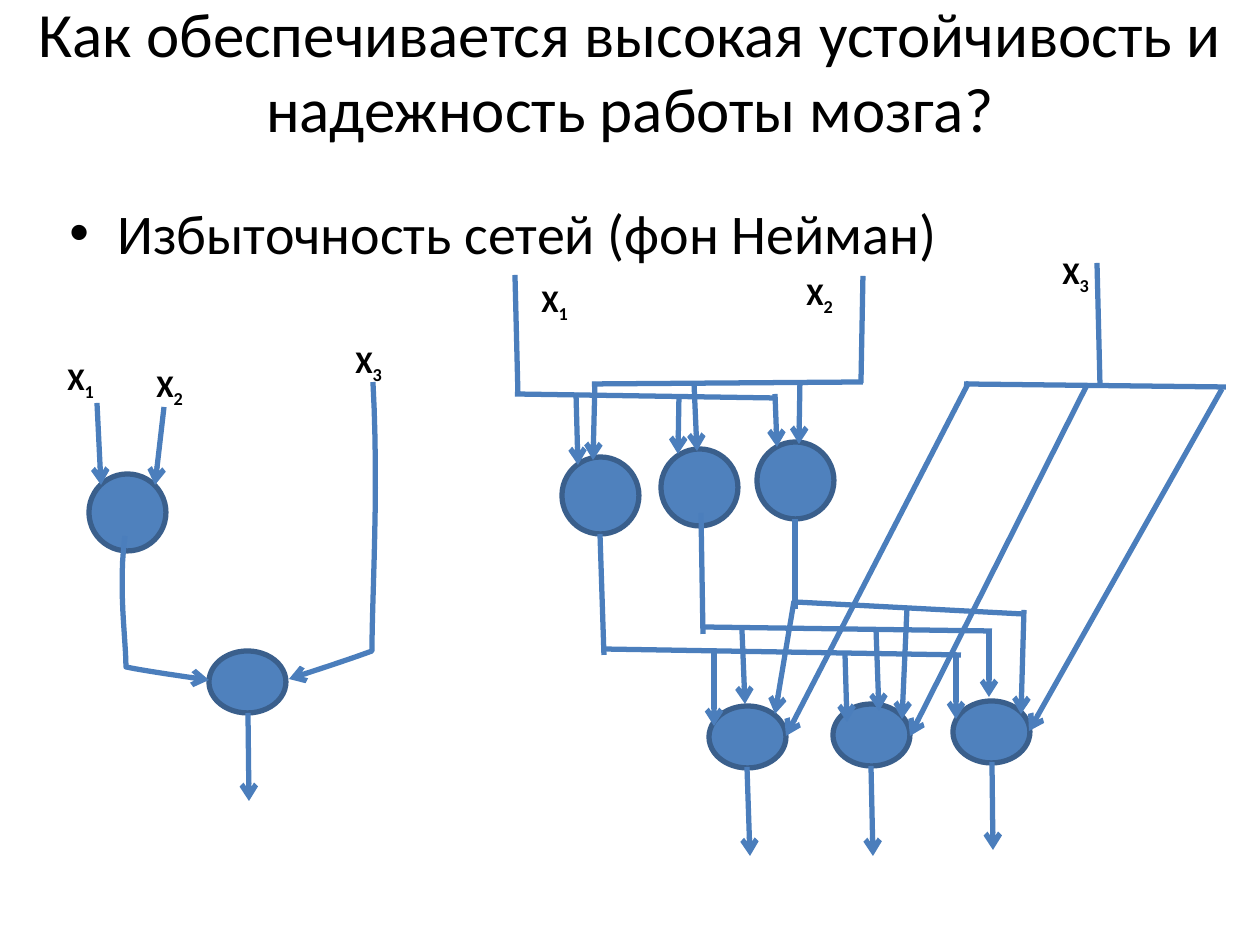
from lxml import etree
from pptx import Presentation
from pptx import util as u
from pptx.dml.color import RGBColor
from pptx.enum import shapes, text
from pptx.oxml.ns import qn

PX = 914400 / 126
BLUE, EDGE, WIRE, INK = "4F81BD", "3A5F8C", "4B7EBC", "000000"


def px(*nums):
    return [u.Emu(round(n * PX)) for n in nums]


def paint(fmt, hue):
    fmt.solid()
    fmt.fore_color.rgb = RGBColor.from_string(hue)


deck = Presentation()
deck.slide_width, deck.slide_height = px(1260, 945)
slide = deck.slides.add_slide(deck.slide_layouts[6])
tree = slide.shapes

bodies = [(89, 474, 77), (562, 457, 77), (661, 449, 77), (757, 442, 77),
          (209, 651, 62), (709, 706, 62), (833, 704, 62), (953, 701, 62)]
for x, y, high in bodies:
    cell = tree.add_shape(shapes.MSO_SHAPE.OVAL, *px(x, y, 77, high))
    cell.shadow.inherit = False
    paint(cell.fill, BLUE)
    paint(cell.line.fill, EDGE)
    cell.line.width = u.Pt(3)

arrows = [
    (97, 403, 101, 485), (164, 407, 155, 485), (248, 713, 249, 801),
    (576, 393, 578, 465), (679, 397, 678, 454), (775, 394, 777, 447),
    (595, 382, 593, 460), (694, 383, 697, 451), (800, 381, 799, 444),
    (714, 651, 714, 726), (845, 654, 847, 722), (956, 654, 956, 719),
    (742, 630, 745, 704), (876, 629, 879, 711), (989, 631, 989, 697),
    (794, 601, 775, 714), (907, 609, 902, 719), (1024, 610, 1021, 714),
    (969, 382, 786, 736), (1086, 387, 910, 736), (1222, 389, 1029, 731),
    (747, 767, 750, 856), (871, 766, 873, 856), (992, 762, 993, 850),
]
wires = [
    (604, 655, 600, 534), (961, 655, 604, 649),
    (703, 634, 701, 513), (992, 631, 703, 627),
    (795, 609, 795, 519), (1023, 614, 795, 602),
    (518, 396, 515, 275), (777, 398, 515, 394),
    (861, 383, 863, 276), (592, 384, 863, 382),
    (1100, 384, 1097, 263), (1226, 387, 964, 384),
]
curves = [
    [(125, 536), (118, 588), (126, 639), (126, 667),
     (150, 672), (209, 680), (209, 680)],
    [(373, 382), (379, 491), (372, 596), (372, 651),
     (348, 660), (289, 679), (289, 679)],
]
paths = []
for ends in arrows + wires:
    link = tree.add_connector(shapes.MSO_CONNECTOR.STRAIGHT, *px(*ends))
    etree.SubElement(link._element.spPr, qn("a:effectLst"))
    paths.append((link, ends in arrows))

for knots in curves:
    dots = []
    for i in (0, 3):
        for step in range(1, 13):
            t = step / 12
            mix = ((1 - t) ** 3, 3 * t * (1 - t) ** 2, 3 * t * t * (1 - t), t ** 3)
            dots.append(px(*(sum(m * k[axis] for m, k in zip(mix, knots[i:i + 4]))
                             for axis in (0, 1))))
    pen = tree.build_freeform(*px(*knots[0]), scale=1.0)
    pen.add_line_segments(dots, close=False)
    curve = pen.convert_to_shape()
    curve.shadow.inherit = False
    curve.fill.background()
    paths.append((curve, True))

for item, tip in paths:
    paint(item.line.fill, WIRE)
    item.line.width = u.Pt(3)
    if tip:
        etree.SubElement(item.line._get_or_add_ln(), qn("a:tailEnd"), type="arrow")

texts = [
    (0, 0, 1260, 140, 36, ["Как обеспечивается высокая устойчивость и надежность работы мозга?"]),
    (57, 192, 1134, 111, 32, ["Избыточность сетей (фон Нейман)"]),
]
labels = [(55, 353, "1"), (144, 360, "2"), (343, 336, "3"),
          (529, 275, "1"), (794, 268, "2"), (1050, 247, "3")]
texts += [(x, y, 66, 50, 18, ["Х", sub]) for x, y, sub in labels]

for x, y, wide, high, size, runs in texts:
    box = tree.add_textbox(*px(x, y, wide, high))
    frame = box.text_frame
    frame.word_wrap = True
    para = frame.paragraphs[0]
    for n, word in enumerate(runs):
        run = para.add_run()
        run.text = word
        run.font.name = "Calibri"
        run.font.size = u.Pt(size)
        run.font.bold = size == 18
        paint(run.font.fill, INK)
        if n:
            run.font._element.set("baseline", "-25000")
    if size == 36:
        frame.vertical_anchor = text.MSO_ANCHOR.MIDDLE
        para.alignment = text.PP_ALIGN.CENTER
    elif size == 32:
        props = para._p.get_or_add_pPr()
        dent = px(48)[0]
        props.set("marL", str(dent))
        props.set("indent", str(-dent))
        etree.SubElement(props, qn("a:buFont"), typeface="Arial")
        etree.SubElement(props, qn("a:buChar"), char="•")

deck.save("out.pptx")
